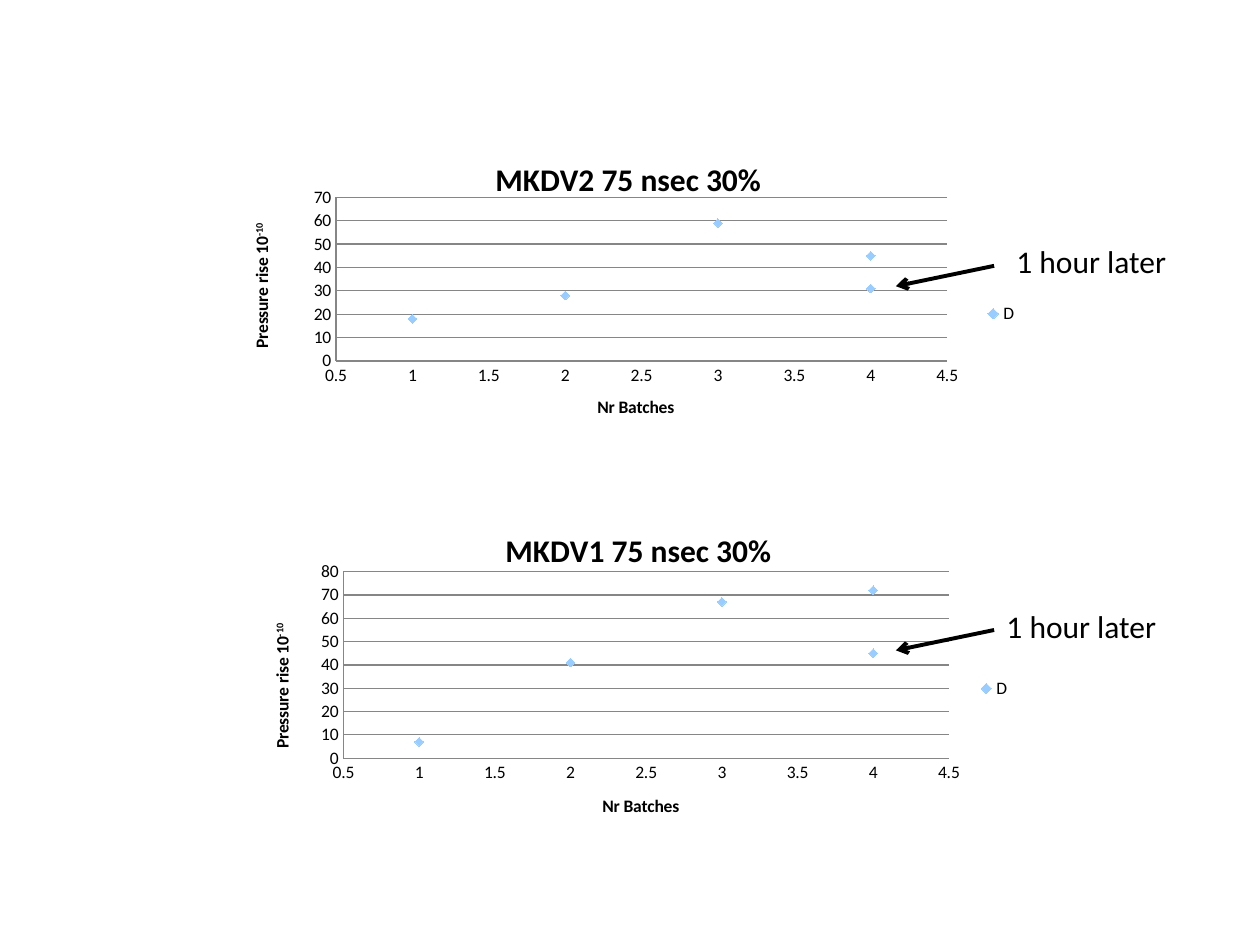
import pptx
import pptx.chart.data
import pptx.dml.color
import pptx.enum.chart
import pptx.enum.shapes
import pptx.enum.text
import pptx.oxml
import pptx.oxml.ns
import pptx.util
from pptx.util import Cm

FONT = "Calibri"
COLOURS = {"text": "000000", "marker": "99CCFF", "grid": "868686", "background": "FFFFFF"}
BATCHES = [1, 2, 3, 4, 4]

# Boxes are left, top, width, height in cm; note is relative to its panel.
# Layout values are fractions of the chart's width and height.
PANELS = [
    {
        "title": "MKDV1 75 nsec 30%", "values": [7, 41, 67, 72, 45], "maximum": 80,
        "box": (4.95, 10.31, 15.67, 7.14), "arrow_top": 2.39, "note": (15.09, 1.81),
        "layout": {"plot": (0.126, 0.17, 0.779, 0.527), "title": (0.327, 0.032),
                   "x_title": (0.455, 0.79), "y_title": (0.027, 0.305),
                   "legend": (0.938, 0.46, 0.05, 0.08)},
    },
    {
        "title": "MKDV2 75 nsec 30%", "values": [18, 28, 59, 45, 31], "maximum": 70,
        "box": (4.57, 2.77, 16.21, 7.11), "arrow_top": 2.59, "note": (15.67, 1.98),
        "layout": {"plot": (0.136, 0.17, 0.76, 0.464), "title": (0.327, 0.042),
                   "x_title": (0.457, 0.723), "y_title": (0.024, 0.232),
                   "legend": (0.938, 0.46, 0.05, 0.08)},
    },
]
ARROW_START, ARROW_END, ARROW_DROP = 20.04, 18.06, 0.41


def colour(name):
    return pptx.dml.color.RGBColor.from_string(COLOURS[name])


def style_font(font, size, bold=False):
    font.name = FONT
    font.size = pptx.util.Pt(size)
    font.bold = bold
    font.color.rgb = colour("text")


def set_layout(element, fractions, after=None):
    """Place a chart part by hand, after the named child or as first child."""
    for old in element.findall(pptx.oxml.ns.qn("c:layout")):
        element.remove(old)
    inner = '<c:layoutTarget val="inner"/>' if after is None else ""
    modes = '<c:xMode val="edge"/><c:yMode val="edge"/>'
    numbers = "".join(f'<c:{key} val="{value}"/>' for key, value in zip("xywh", fractions))
    layout = pptx.oxml.parse_xml(
        f'<c:layout {pptx.oxml.ns.nsdecls("c")}><c:manualLayout>'
        f"{inner}{modes}{numbers}</c:manualLayout></c:layout>")
    if after is None:
        element.insert(0, layout)
    else:
        element.find(pptx.oxml.ns.qn(after)).addnext(layout)


def set_title(title, text, size, fractions, superscript=None):
    paragraph = title.text_frame.paragraphs[0]
    paragraph.text = text
    if superscript:
        run = paragraph.add_run()
        run.text = superscript
        run.font._element.set("baseline", "30000")
    for run in paragraph.runs:
        style_font(run.font, size, bold=True)
    set_layout(title._element, fractions, after="c:tx")


def style_axis(axis, minimum, maximum, step):
    axis.minimum_scale, axis.maximum_scale, axis.major_unit = minimum, maximum, step
    axis.major_tick_mark = axis.minor_tick_mark = pptx.enum.chart.XL_TICK_MARK.NONE
    axis.has_major_gridlines = False
    axis.format.line.color.rgb = colour("grid")
    style_font(axis.tick_labels.font, 10)


def add_scatter(slide, box, panel):
    data = pptx.chart.data.XyChartData()
    points = data.add_series("D")
    for batch, value in zip(BATCHES, panel["values"]):
        points.add_data_point(batch, value)
    chart = slide.shapes.add_chart(
        pptx.enum.chart.XL_CHART_TYPE.XY_SCATTER, *map(Cm, box), data).chart
    layout = panel["layout"]
    style_font(chart.font, 10)

    # Title, legend and plot area
    chart.has_title = True
    set_title(chart.chart_title, panel["title"], 18, layout["title"])
    chart.has_legend = True
    chart.legend.position = pptx.enum.chart.XL_LEGEND_POSITION.RIGHT
    chart.legend.include_in_layout = False
    style_font(chart.legend.font, 10)
    set_layout(chart.legend._element, layout["legend"], after="c:legendPos")
    set_layout(chart._chartSpace.chart.plotArea, layout["plot"])

    # Axes
    x_axis, y_axis = chart.category_axis, chart.value_axis
    style_axis(x_axis, 0.5, 4.5, 0.5)
    style_axis(y_axis, 0, panel["maximum"], 10)
    y_axis.has_major_gridlines = True
    y_axis.major_gridlines.format.line.color.rgb = colour("grid")
    set_title(x_axis.axis_title, "Nr Batches", 10, layout["x_title"])
    set_title(y_axis.axis_title, "Pressure rise 10", 10, layout["y_title"], "-10")

    # Markers without a joining line
    chart.plots[0].vary_by_categories = False
    series = chart.plots[0].series[0]
    series.smooth = False
    series.format.line.fill.background()
    series.marker.style = pptx.enum.chart.XL_MARKER_STYLE.DIAMOND
    series.marker.size = 5
    series.marker.format.fill.solid()
    series.marker.format.fill.fore_color.rgb = colour("marker")
    series.marker.format.line.fill.background()


def add_arrow(slide, top):
    arrow = slide.shapes.add_connector(
        pptx.enum.shapes.MSO_CONNECTOR.STRAIGHT,
        Cm(ARROW_START), Cm(top), Cm(ARROW_END), Cm(top + ARROW_DROP))
    arrow.line.color.rgb = colour("text")
    arrow.line.width = pptx.util.Pt(2.25)
    namespace = pptx.oxml.ns.nsdecls("a")
    arrow.line._get_or_add_ln().append(
        pptx.oxml.parse_xml(f'<a:tailEnd {namespace} type="arrow"/>'))
    arrow._element.spPr.append(pptx.oxml.parse_xml(f"<a:effectLst {namespace}/>"))


def add_note(slide, left, top):
    frame = slide.shapes.add_textbox(Cm(left), Cm(top), Cm(3.56), Cm(1.02)).text_frame
    frame.word_wrap = False
    frame.auto_size = pptx.enum.text.MSO_AUTO_SIZE.SHAPE_TO_FIT_TEXT
    frame.text = "1 hour later"
    style_font(frame.paragraphs[0].runs[0].font, 18)


def add_panel(slide, box, panel):
    """One scatter chart with the arrow and note on its last reading."""
    left, top = box[:2]
    note_left, note_top = panel["note"]
    add_scatter(slide, box, panel)
    add_arrow(slide, top + panel["arrow_top"])
    add_note(slide, left + note_left, top + note_top)


def main():
    presentation = pptx.Presentation()
    presentation.slide_width, presentation.slide_height = Cm(25.4), Cm(19.05)
    slide = presentation.slides.add_slide(presentation.slide_layouts[6])
    slide.background.fill.solid()
    slide.background.fill.fore_color.rgb = colour("background")
    for panel in PANELS:
        add_panel(slide, panel["box"], panel)
    presentation.save("out.pptx")


if __name__ == "__main__":
    main()
